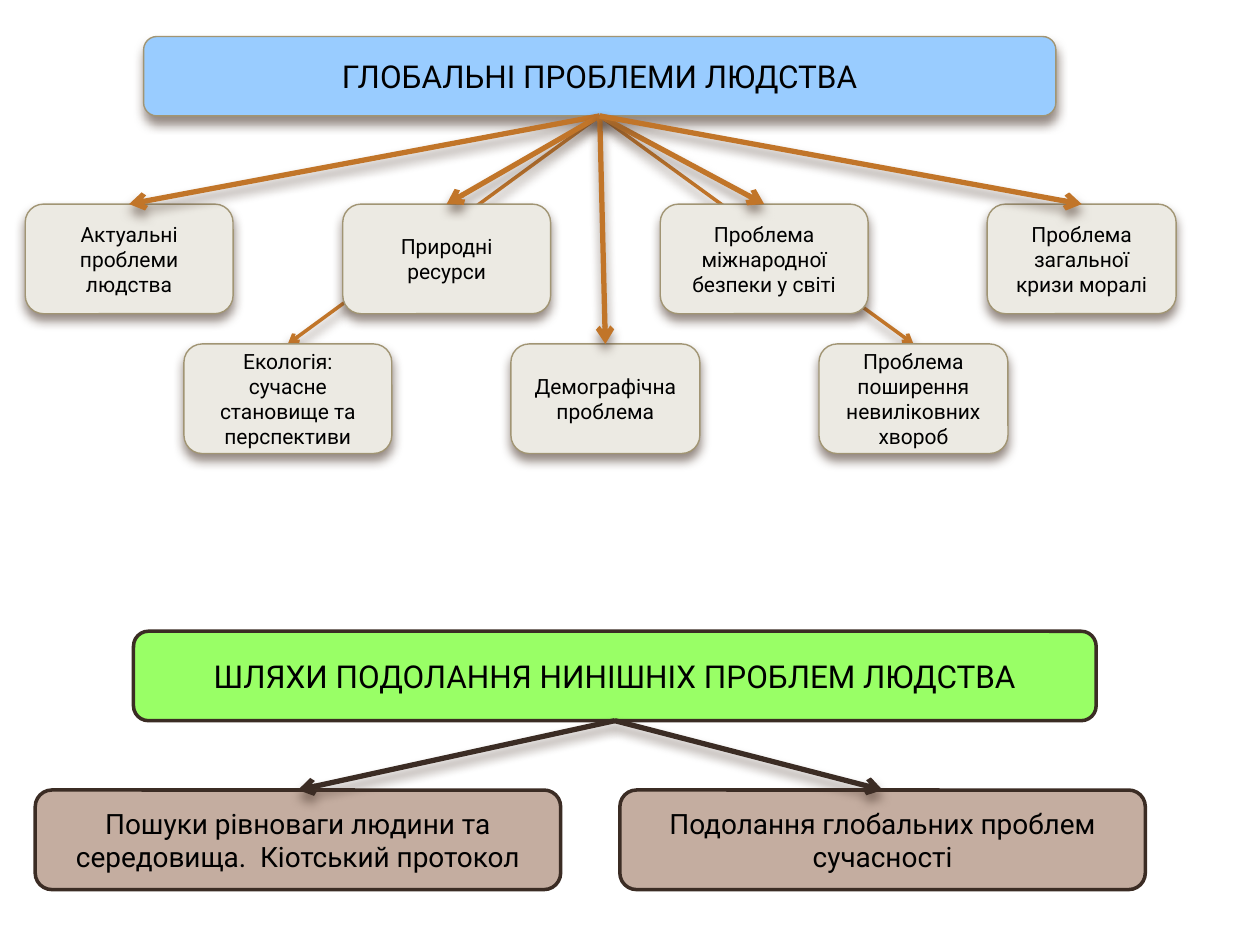
from pptx import Presentation
from pptx.util import Inches, Pt
from pptx.dml.color import RGBColor as Rgb
from pptx.enum.shapes import MSO_SHAPE as Shape, MSO_CONNECTOR as Line
from pptx.enum.text import PP_ALIGN as Align, MSO_ANCHOR as Anchor
from pptx.oxml import parse_xml
from pptx.oxml.ns import nsdecls
from lxml.etree import SubElement

BLACK = Rgb(0x00, 0x00, 0x00)
BLUE = Rgb(0x99, 0xCC, 0xFF)
SAND = Rgb(0xEC, 0xEA, 0xE3)
TAN = Rgb(0xA1, 0x95, 0x74)
RUST = Rgb(0xC1, 0x75, 0x29)
GREEN = Rgb(0x99, 0xFF, 0x66)
CLAY = Rgb(0xC4, 0xAD, 0xA0)
BROWN = Rgb(0x3B, 0x2C, 0x24)

SHADE = (
    f'<a:effectLst {nsdecls("a")}>'
    '<a:outerShdw blurRad="76200" dist="50800" dir="5400000" rotWithShape="0">'
    '<a:srgbClr val="4E3B30"><a:alpha val="60000"/></a:srgbClr>'
    '</a:outerShdw></a:effectLst>'
)

deck = Presentation()
deck.slide_width = Inches(10)
deck.slide_height = Inches(7.5)
slide = deck.slides.add_slide(deck.slide_layouts[6])
tree = slide.shapes


def add_box(left, top, wide, high, text, size, fill, edge, weight, shade):
    box = tree.add_shape(Shape.ROUNDED_RECTANGLE, Inches(left), Inches(top),
                         Inches(wide), Inches(high))
    box.fill.solid()
    box.fill.fore_color.rgb = fill
    box.line.color.rgb = edge
    box.line.width = Pt(weight)
    if shade:
        box._element.spPr.append(parse_xml(SHADE))
    else:
        box.shadow.inherit = False
    frame = box.text_frame
    frame.word_wrap = True
    frame.vertical_anchor = Anchor.MIDDLE
    para = frame.paragraphs[0]
    para.alignment = Align.CENTER
    run = para.add_run()
    run.text = text
    run.font.name = "Roboto"
    run.font.size = Pt(size)
    run.font.color.rgb = BLACK
    return box


def add_arrow(start, end, color, weight):
    arrow = tree.add_connector(Line.STRAIGHT, 0, 0, 0, 0)
    arrow.begin_connect(start, 2)
    arrow.end_connect(end, 0)
    arrow.line.color.rgb = color
    arrow.line.width = Pt(weight)
    props = arrow._element.spPr
    SubElement(arrow.line._get_or_add_ln(),
               "{http://schemas.openxmlformats.org/drawingml/2006/main}tailEnd",
               type="arrow")
    props.append(parse_xml(SHADE))
    return arrow


EDGE, STEP = 0.2, 1.26
ROWS = (1.62, 2.73)
HIGH, WIDE, SLIM = 0.87, 1.65, 1.5
NUDGE = (WIDE - SLIM) / 2

topics = [
    ("Актуальні проблеми людства", WIDE, 0),
    ("Екологія: сучасне становище та перспективи", WIDE, 0),
    ("Природні ресурси", WIDE, 0),
    ("Демографічна проблема", SLIM, NUDGE),
    ("Проблема міжнародної безпеки у світі", WIDE, 0),
    ("Проблема поширення невиліковних хвороб", SLIM, 0),
    ("Проблема загальної кризи моралі", SLIM, NUDGE),
]

head = add_box(1.14, 0.29, 7.24, 0.63, "ГЛОБАЛЬНІ ПРОБЛЕМИ ЛЮДСТВА",
               18, BLUE, TAN, 0.79, True)
boxes = [
    add_box(EDGE + col * STEP + shift, ROWS[col % 2], wide, HIGH,
            text, 12, SAND, TAN, 0.79, True)
    for col, (text, wide, shift) in enumerate(topics)
]

for col, box in enumerate(boxes):
    behind = col in (1, 5)
    arrow = add_arrow(head, box, RUST, 2 if behind else 3)
    if behind:
        tree._spTree.insert(2, arrow._element)

goal = add_box(1.06, 5.01, 7.64, 0.71,
               "ШЛЯХИ ПОДОЛАННЯ НИНІШНІХ ПРОБЛЕМ ЛЮДСТВА",
               18, GREEN, BROWN, 2, False)
ways = [
    "Пошуки рівноваги людини та середовища.  Кіотський протокол",
    "Подолання глобальних проблем сучасності",
]
paths = [
    add_box(0.28 + col * 4.64, 6.27, 4.17, 0.79, text, 16, CLAY, BROWN, 2, False)
    for col, text in enumerate(ways)
]
for box in paths:
    add_arrow(goal, box, BROWN, 3)

deck.save("out.pptx")
